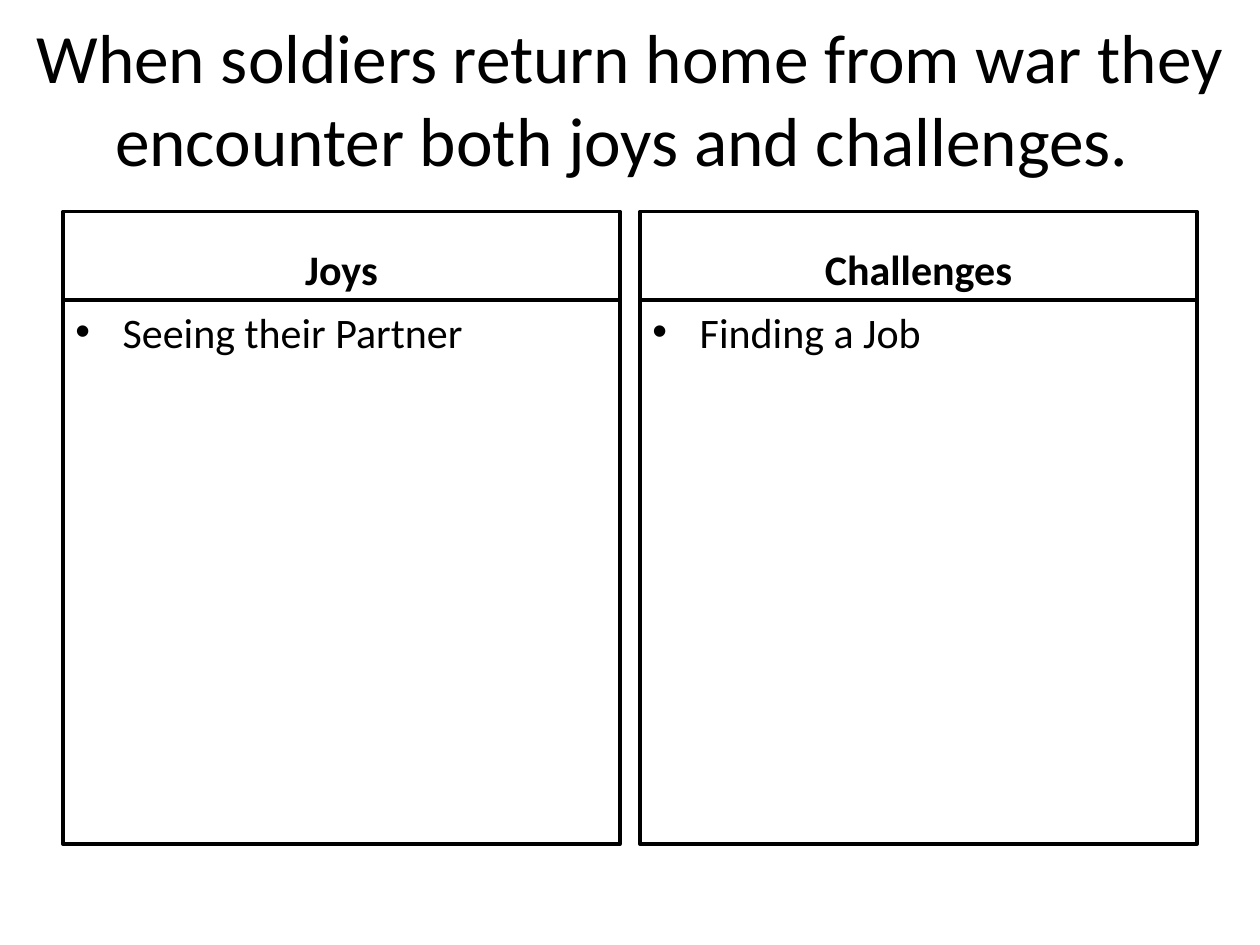
from dataclasses import dataclass

from lxml.etree import SubElement
from pptx import Presentation
from pptx.dml.color import RGBColor
from pptx.enum.shapes import MSO_SHAPE as Shape
from pptx.enum.text import MSO_ANCHOR as Anchor, PP_ALIGN as Align
from pptx.oxml.ns import qn
from pptx.util import Pt

COLORS = {"ink": "000000", "paper": "FFFFFF"}
FONT = "Calibri"
PAGE_WIDTH, PAGE_HEIGHT = 720, 540
TITLE = "When soldiers return home from war they encounter both joys and challenges. "
TITLE_HEIGHT, TITLE_SIZE = 111.6, 39.6

# Two equal columns, symmetric about the page centre
MARGIN, COLUMN_WIDTH = 36, 318.24
COLUMN_TOP, HEADING_HEIGHT, LIST_HEIGHT = 120.96, 50.4, 311.04
TEXT_SIZE, BULLET_INDENT = 24, 27


@dataclass
class Column:
    heading: str
    items: list[str]


COLUMNS = [
    Column("Joys", ["Seeing their Partner"]),
    Column("Challenges", ["Finding a Job"]),
]


def color(name: str) -> RGBColor:
    return RGBColor.from_string(COLORS[name])


def style_paragraph(para, size: float, align, bold: bool = False) -> None:
    para.alignment = align
    para.font.name = FONT
    para.font.size = Pt(size)
    para.font.bold = bold
    para.font.color.rgb = color("ink")


def add_bullet(para) -> None:
    properties = para._p.get_or_add_pPr()
    properties.set("marL", str(Pt(BULLET_INDENT)))
    properties.set("indent", str(-Pt(BULLET_INDENT)))
    SubElement(properties, qn("a:buFont"), typeface="Arial")
    SubElement(properties, qn("a:buChar"), char="•")


def add_title(page) -> None:
    box = page.shapes.add_textbox(0, 0, Pt(PAGE_WIDTH), Pt(TITLE_HEIGHT))
    frame = box.text_frame
    frame.word_wrap = True
    frame.vertical_anchor = Anchor.MIDDLE
    frame.text = TITLE
    style_paragraph(frame.paragraphs[0], TITLE_SIZE, Align.CENTER)


def add_panel(page, left: float, top: float, height: float, anchor):
    """Draw an outlined rectangle and return its text frame."""
    box = page.shapes.add_shape(
        Shape.RECTANGLE, Pt(left), Pt(top), Pt(COLUMN_WIDTH), Pt(height))
    box.shadow.inherit = False
    box.fill.solid()
    box.fill.fore_color.rgb = color("paper")
    box.line.color.rgb = color("ink")
    box.line.width = Pt(2)
    frame = box.text_frame
    frame.word_wrap = True
    frame.vertical_anchor = anchor
    return frame


def add_column(page, column: Column, left: float) -> None:
    # Heading
    frame = add_panel(page, left, COLUMN_TOP, HEADING_HEIGHT, Anchor.BOTTOM)
    frame.text = column.heading
    style_paragraph(frame.paragraphs[0], TEXT_SIZE, Align.CENTER, bold=True)

    # Bulleted list
    frame = add_panel(page, left, COLUMN_TOP + HEADING_HEIGHT, LIST_HEIGHT, Anchor.TOP)
    frame.text = "\n".join(column.items)
    for para in frame.paragraphs:
        add_bullet(para)
        style_paragraph(para, TEXT_SIZE, Align.LEFT)


def main() -> None:
    deck = Presentation()
    deck.slide_width, deck.slide_height = Pt(PAGE_WIDTH), Pt(PAGE_HEIGHT)
    page = deck.slides.add_slide(deck.slide_layouts[6])
    add_title(page)
    column_step = PAGE_WIDTH - 2 * MARGIN - COLUMN_WIDTH
    for index, column in enumerate(COLUMNS):
        add_column(page, column, MARGIN + index * column_step)
    deck.save("out.pptx")


if __name__ == "__main__":
    main()
